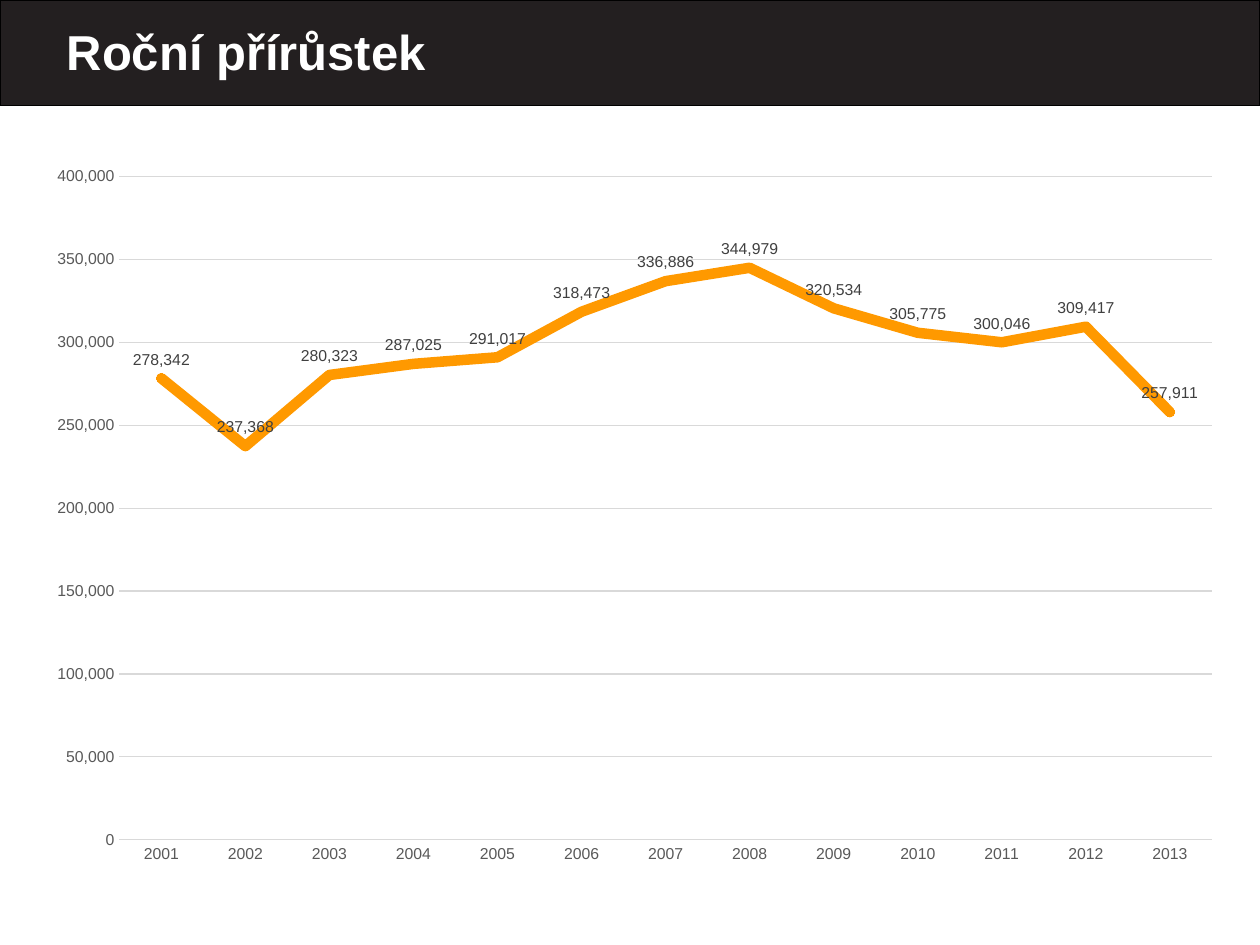
from dataclasses import dataclass

import lxml.etree
import pptx
import pptx.chart.data
import pptx.dml.color
import pptx.enum.chart
import pptx.enum.shapes
import pptx.enum.text
import pptx.oxml
import pptx.oxml.ns
import pptx.util


def color(value):
    return pptx.dml.color.RGBColor.from_string(value)


@dataclass(frozen=True)
class Theme:
    font: str = "Arial"
    band: str = "231F20"
    band_line: str = "000000"
    title: str = "FFFFFF"
    axis_text: str = "595959"
    label_text: str = "404040"
    grid: str = "D9D9D9"
    series: str = "FF9900"
    title_size: int = 28
    chart_size: int = 10
    label_size: int = 9
    thin: float = 0.75
    thick: float = 6


THEME = Theme()
WIDTH, HEIGHT = pptx.util.Inches(10), pptx.util.Inches(7.5)
TITLE = "Roční přírůstek"
YEARS = range(2001, 2014)
INCREASES = (278342, 237368, 280323, 287025, 291017, 318473, 336886,
             344979, 320534, 305775, 300046, 309417, 257911)


def share(left, top, width, height):
    """Turn shares of the slide's size into a box of lengths."""
    return (int(left * WIDTH), int(top * HEIGHT),
            int(width * WIDTH), int(height * HEIGHT))


def style_font(font, size, text_color, bold=None):
    font.name, font.size, font.bold = THEME.font, pptx.util.Pt(size), bold
    font.color.rgb = color(text_color)


def style_line(line, line_color, width):
    line.color.rgb = color(line_color)
    line.width = pptx.util.Pt(width)


def add_header(slide, box):
    left, top, width, height = box

    # Dark band, placed behind the title
    band = slide.shapes.add_shape(pptx.enum.shapes.MSO_SHAPE.RECTANGLE, *box)
    band.shadow.inherit = False
    band.fill.solid()
    band.fill.fore_color.rgb = color(THEME.band)
    style_line(band.line, THEME.band_line, THEME.thin)
    slide.shapes.title._element.addprevious(band._element)

    # Title
    title = slide.shapes.title
    title.left, title.top = left + int(width * 0.043), top + int(height * 0.06)
    title.width, title.height = int(width * 0.9), int(height * 0.85)
    frame = title.text_frame
    frame.text = TITLE
    frame.word_wrap = True
    frame.vertical_anchor = pptx.enum.text.MSO_ANCHOR.MIDDLE
    paragraph = frame.paragraphs[0]
    paragraph.alignment = pptx.enum.text.PP_ALIGN.LEFT
    style_font(paragraph.font, THEME.title_size, THEME.title, bold=True)


def set_plot_area(chart, **shares):
    """Fix the inner plot area as shares of the chart's size."""
    modes = '<c:layoutTarget val="inner"/><c:xMode val="edge"/><c:yMode val="edge"/>'
    sizes = "".join(f'<c:{name} val="{value}"/>' for name, value in shares.items())
    layout = pptx.oxml.parse_xml(
        f'<c:layout {pptx.oxml.ns.nsdecls("c")}>'
        f"<c:manualLayout>{modes}{sizes}</c:manualLayout></c:layout>")
    plot_area = chart._chartSpace.chart.plotArea
    for old_layout in plot_area.findall(pptx.oxml.ns.qn("c:layout")):
        plot_area.remove(old_layout)
    plot_area.insert(0, layout)


def add_increase_chart(slide, box):
    chart_data = pptx.chart.data.CategoryChartData(number_format="#,##0")
    chart_data.categories = [str(year) for year in YEARS]
    chart_data.add_series("Series 1", INCREASES)
    chart = slide.shapes.add_chart(
        pptx.enum.chart.XL_CHART_TYPE.LINE_MARKERS, *box, chart_data).chart
    chart.has_legend = False
    chart.has_title = False
    style_font(chart.font, THEME.chart_size, THEME.band_line)
    set_plot_area(chart, x=0.07, y=0.03, w=0.91, h=0.92)

    # Axes
    for axis in (chart.category_axis, chart.value_axis):
        axis.major_tick_mark = pptx.enum.chart.XL_TICK_MARK.NONE
        axis.minor_tick_mark = pptx.enum.chart.XL_TICK_MARK.NONE
        style_font(axis.tick_labels.font, THEME.label_size, THEME.axis_text)
    style_line(chart.category_axis.format.line, THEME.grid, THEME.thin)
    value_axis = chart.value_axis
    value_axis.minimum_scale, value_axis.maximum_scale = 0, 400000
    value_axis.major_unit = 50000
    value_axis.format.line.fill.background()
    value_axis.tick_labels.number_format = "#,##0"
    value_axis.tick_labels.number_format_is_linked = False
    style_line(value_axis.major_gridlines.format.line, THEME.grid, THEME.thin)

    # Series with round line ends
    plot = chart.plots[0]
    plot.vary_by_categories = False
    series = plot.series[0]
    series.smooth = False
    style_line(series.format.line, THEME.series, THEME.thick)
    line_xml = series._element.spPr.find(pptx.oxml.ns.qn("a:ln"))
    line_xml.set("cap", "rnd")
    lxml.etree.SubElement(line_xml, pptx.oxml.ns.qn("a:round"))
    series.marker.style = pptx.enum.chart.XL_MARKER_STYLE.CIRCLE
    series.marker.size = 5
    series.marker.format.fill.solid()
    series.marker.format.fill.fore_color.rgb = color(THEME.series)
    series.marker.format.line.fill.background()

    # Value labels
    labels = series.data_labels
    labels.show_value = True
    labels.position = pptx.enum.chart.XL_LABEL_POSITION.ABOVE
    labels.number_format = "#,##0"
    labels.number_format_is_linked = False
    style_font(labels.font, THEME.label_size, THEME.label_text)


def main():
    presentation = pptx.Presentation()
    presentation.slide_width, presentation.slide_height = WIDTH, HEIGHT
    title_only = presentation.slide_layouts.get_by_name("Title Only")
    slide = presentation.slides.add_slide(title_only)
    add_header(slide, share(0, 0, 1, 0.112))
    add_increase_chart(slide, share(0.028, 0.164, 0.953, 0.763))
    presentation.save("out.pptx")


if __name__ == "__main__":
    main()
